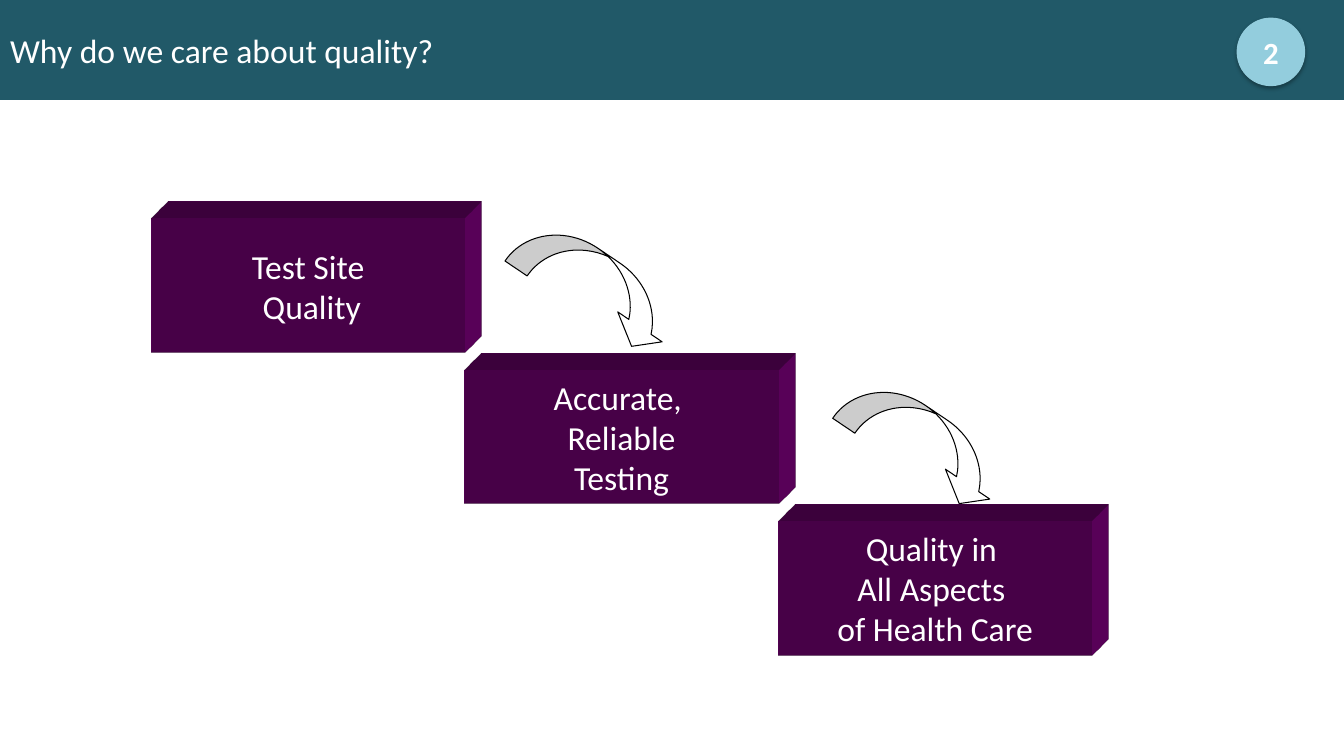
import dataclasses

import lxml.etree
import pptx
import pptx.dml.color
import pptx.enum.shapes
import pptx.enum.text
import pptx.oxml
import pptx.util

SHAPE = pptx.enum.shapes.MSO_SHAPE
ALIGN = pptx.enum.text.PP_ALIGN
MIDDLE = pptx.enum.text.MSO_ANCHOR.MIDDLE
A_NS = 'xmlns:a="http://schemas.openxmlformats.org/drawingml/2006/main"'

WIDTH, HEIGHT = 13.33, 7.5
BANNER_H = 0.99
BOX_W, BOX_H = 3.11, 1.33
STEP_X, STEP_Y = 3.11, 1.5
STEPS = (
    ("Test Site", " Quality"),
    ("Accurate, ", "Reliable", "Testing"),
    ("Quality in ", "All Aspects ", "of Health Care"),
)


@dataclasses.dataclass(frozen=True)
class Theme:
    """Colours, font and type sizes of the slide."""
    banner: str = "215968"
    box: str = "660066"
    badge: str = "93CDDD"
    light: str = "FFFFFF"
    dark: str = "000000"
    font: str = "Calibri"
    text_size: int = 24
    badge_size: int = 22
    line: float = 0.75


THEME = Theme()


def rgb(value):
    """Return a colour object for a hex string."""
    return pptx.dml.color.RGBColor.from_string(value)


def place(s, x, y, w, h):
    """Put a shape at a position and size given in inches."""
    s.left, s.top, s.width, s.height = map(pptx.util.Inches, (x, y, w, h))


def paint(s, fill, line=None):
    """Give a shape a solid fill and an optional thin outline."""
    s.fill.solid()
    s.fill.fore_color.rgb = rgb(fill)
    if line:
        s.line.color.rgb = rgb(line)
        s.line.width = pptx.util.Pt(THEME.line)
    else:
        s.line.fill.background()


def write(s, text, size, align, bold=False):
    """Set text in a shape and format every run."""
    tf = s.text_frame
    tf.text = text
    tf.vertical_anchor = MIDDLE
    for p in tf.paragraphs:
        p.alignment = align
        for r in p.runs:
            r.font.name = THEME.font
            r.font.size = pptx.util.Pt(size)
            r.font.bold = bold
            r.font.color.rgb = rgb(THEME.light)


def add_shape(slide, kind, x, y, w, h, fill, line=None):
    """Add a painted preset shape without a shadow."""
    s = slide.shapes.add_shape(kind, *map(pptx.util.Inches, (x, y, w, h)))
    s.shadow.inherit = False
    paint(s, fill, line)
    return s


def extrude(s):
    """Give a shape an oblique depth towards the top right."""
    scene = f"""<a:scene3d {A_NS}><a:camera prst="legacyObliqueTopRight"/>
        <a:lightRig rig="legacyFlat3" dir="b"/></a:scene3d>"""
    depth = f"""<a:sp3d {A_NS} extrusionH="430200" prstMaterial="legacyMatte">
        <a:bevelT w="13500" h="13500" prst="angle"/>
        <a:bevelB w="13500" h="13500" prst="angle"/>
        <a:extrusionClr><a:srgbClr val="{THEME.box}"/></a:extrusionClr></a:sp3d>"""
    for xml in (scene, depth):
        s.element.spPr.append(pptx.oxml.parse_xml(xml))


def cast_shadow(s):
    """Drop a soft shadow straight below a shape."""
    effects = s.element.spPr.find(pptx.oxml.ns.qn("a:effectLst"))
    effects.append(pptx.oxml.parse_xml(
        f"""<a:outerShdw {A_NS} blurRad="39370" dist="22860" dir="5400000"
        rotWithShape="0"><a:srgbClr val="{THEME.dark}"><a:alpha val="35000"/>
        </a:srgbClr></a:outerShdw>"""))


def add_banner(slide, x, y, w, h):
    """Fill the banner with the title."""
    s = slide.shapes.title
    place(s, x, y, w, h)
    paint(s, THEME.banner)
    write(s, "Why do we care about quality?", THEME.text_size, ALIGN.LEFT)


def add_badge(slide, x, y, size):
    """Add the round slide number."""
    s = add_shape(slide, SHAPE.OVAL, x, y, size, size, THEME.badge, THEME.badge)
    cast_shadow(s)
    write(s, "2", THEME.badge_size, ALIGN.CENTER, bold=True)


def add_staircase(slide, x, y):
    """Add the descending blocks, then the arrows between them."""
    for i, lines in enumerate(STEPS):
        s = add_shape(slide, SHAPE.RECTANGLE, x + i * STEP_X, y + i * STEP_Y,
                      BOX_W, BOX_H, THEME.box)
        extrude(s)
        write(s, "\n".join(lines), THEME.text_size, ALIGN.CENTER)
        s.text_frame.word_wrap = False
    for i in range(len(STEPS) - 1):
        s = add_shape(slide, SHAPE.CURVED_DOWN_ARROW, x + 3.53 + i * 3.25,
                      y + 0.35 + i * 1.56, 1.78, 0.62, THEME.light, THEME.dark)
        s.rotation = 34
        for k, value in enumerate((0.428, 0.856, 0.333)):
            s.adjustments[k] = value


def main():
    """Build and save the slide."""
    prs = pptx.Presentation()
    prs.slide_width = pptx.util.Inches(WIDTH)
    prs.slide_height = pptx.util.Inches(HEIGHT)
    slide = prs.slides.add_slide(prs.slide_layouts[5])
    add_banner(slide, 0, 0, WIDTH, BANNER_H)
    add_staircase(slide, 1.5, 2.17)
    add_badge(slide, 12.27, 0.18, 0.67)
    prs.save("out.pptx")


if __name__ == "__main__":
    main()
